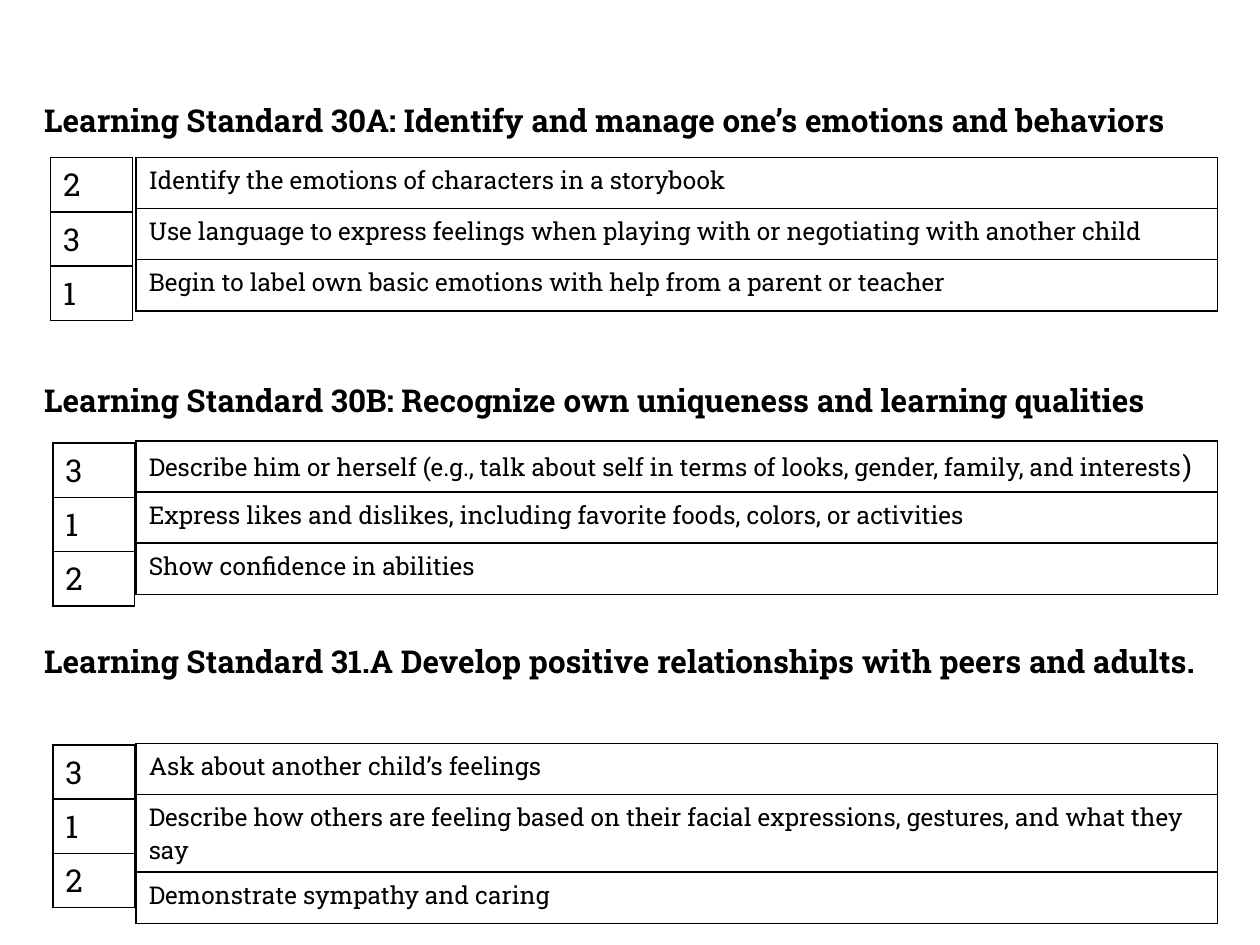
from dataclasses import dataclass

from lxml import etree
from pptx import Presentation
from pptx.dml.color import RGBColor
from pptx.enum import text
from pptx.oxml import ns
from pptx.util import Pt


@dataclass(frozen=True)
class Theme:
    font: str = "Roboto Slab"
    ink: str = "000000"
    heading: float = 18
    number: float = 18
    skill: float = 14
    bracket: float = 16
    rule: float = 1


@dataclass(frozen=True)
class Standard:
    heading: str
    gap_above: float
    skills_top: float
    numbers_left: float
    numbers_top: float
    numbers: tuple[str, ...]
    skills: tuple[str, ...]
    closing: str = ""


THEME = Theme()
ROW_HEIGHT = 29.2
SKILLS_LEFT, SKILLS_WIDTH = 77.8, 617.8
NUMBERS_WIDTH = 46.8

STANDARDS = (
    Standard(
        "Learning Standard 30A: Identify and manage one’s emotions and behaviors",
        0, 90, 28.8, 90, ("2", "3", "1"),
        (
            "Identify the emotions of characters in a storybook",
            "Use language to express feelings when playing with or negotiating with another child",
            "Begin to label own basic emotions with help from a parent or teacher",
        ),
    ),
    Standard(
        "Learning Standard 30B: Recognize own uniqueness and learning qualities",
        138.5, 252, 30.2, 253.2, ("3", "1", "2"),
        (
            "Describe him or herself (e.g., talk about self in terms of looks, gender, family, and interests",
            "Express likes and dislikes, including favorite foods, colors, or activities",
            "Show confidence in abilities",
        ),
        closing=")",
    ),
    Standard(
        "Learning Standard 31.A Develop positive relationships with peers and adults.",
        127.7, 424.8, 30.2, 425.6, ("3", "1", "2"),
        (
            "Ask about another child’s feelings",
            "Describe how others are feeling based on their facial expressions, gestures, and what they say",
            "Demonstrate sympathy and caring",
        ),
    ),
)


def add_words(paragraph, words: str, size: float, bold: bool = False) -> None:
    run = paragraph.add_run()
    run.text = words
    for name, value in {"name": THEME.font, "size": Pt(size), "bold": bold}.items():
        setattr(run.font, name, value)
    run.font.color.rgb = RGBColor.from_string(THEME.ink)


def add_borders(cell) -> None:
    properties = cell._tc.get_or_add_tcPr()
    for position, side in enumerate(("lnL", "lnR", "lnT", "lnB")):
        line = etree.Element(ns.qn(f"a:{side}"), w=str(Pt(THEME.rule)))
        fill = etree.SubElement(line, ns.qn("a:solidFill"))
        etree.SubElement(fill, ns.qn("a:srgbClr"), val=THEME.ink)
        properties.insert(position, line)


def add_column(slide, left: float, top: float, width: float,
               entries: tuple[str, ...], size: float):
    column = slide.shapes.add_table(
        len(entries), 1, Pt(left), Pt(top), Pt(width), Pt(ROW_HEIGHT * len(entries))
    ).table
    column.first_row = column.horz_banding = False
    for cell, entry in zip(column.iter_cells(), entries):
        cell.fill.background()
        add_borders(cell)
        add_words(cell.text_frame.paragraphs[0], entry, size)
    return column


def add_headings(body, standards: tuple[Standard, ...]) -> None:
    place = {"left": Pt(18), "top": Pt(54), "width": Pt(684), "height": Pt(401)}
    for name, value in place.items():
        setattr(body, name, value)
    frame = body.text_frame
    frame.auto_size = text.MSO_AUTO_SIZE.NONE
    frame.vertical_anchor = text.MSO_ANCHOR.TOP
    for index, standard in enumerate(standards):
        heading = frame.add_paragraph() if index else frame.paragraphs[0]
        properties = heading._p.get_or_add_pPr()
        properties.set("marL", "0")
        properties.set("indent", "0")
        etree.SubElement(properties, ns.qn("a:buNone"))
        heading.space_before = Pt(standard.gap_above)
        add_words(heading, standard.heading, THEME.heading, bold=True)


def add_standard(slide, standard: Standard) -> None:
    skills = add_column(slide, SKILLS_LEFT, standard.skills_top, SKILLS_WIDTH,
                        standard.skills, THEME.skill)
    if standard.closing:
        add_words(skills.cell(0, 0).text_frame.paragraphs[0],
                  standard.closing, THEME.bracket)
    add_column(slide, standard.numbers_left, standard.numbers_top, NUMBERS_WIDTH,
               standard.numbers, THEME.number)


def main() -> None:
    deck = Presentation()
    deck.slide_width, deck.slide_height = Pt(720), Pt(540)
    slide = deck.slides.add_slide(deck.slide_layouts[1])
    title = slide.shapes.title._element
    title.getparent().remove(title)
    add_headings(slide.placeholders[1], STANDARDS)
    for standard in STANDARDS:
        add_standard(slide, standard)
    deck.save("out.pptx")


if __name__ == "__main__":
    main()
